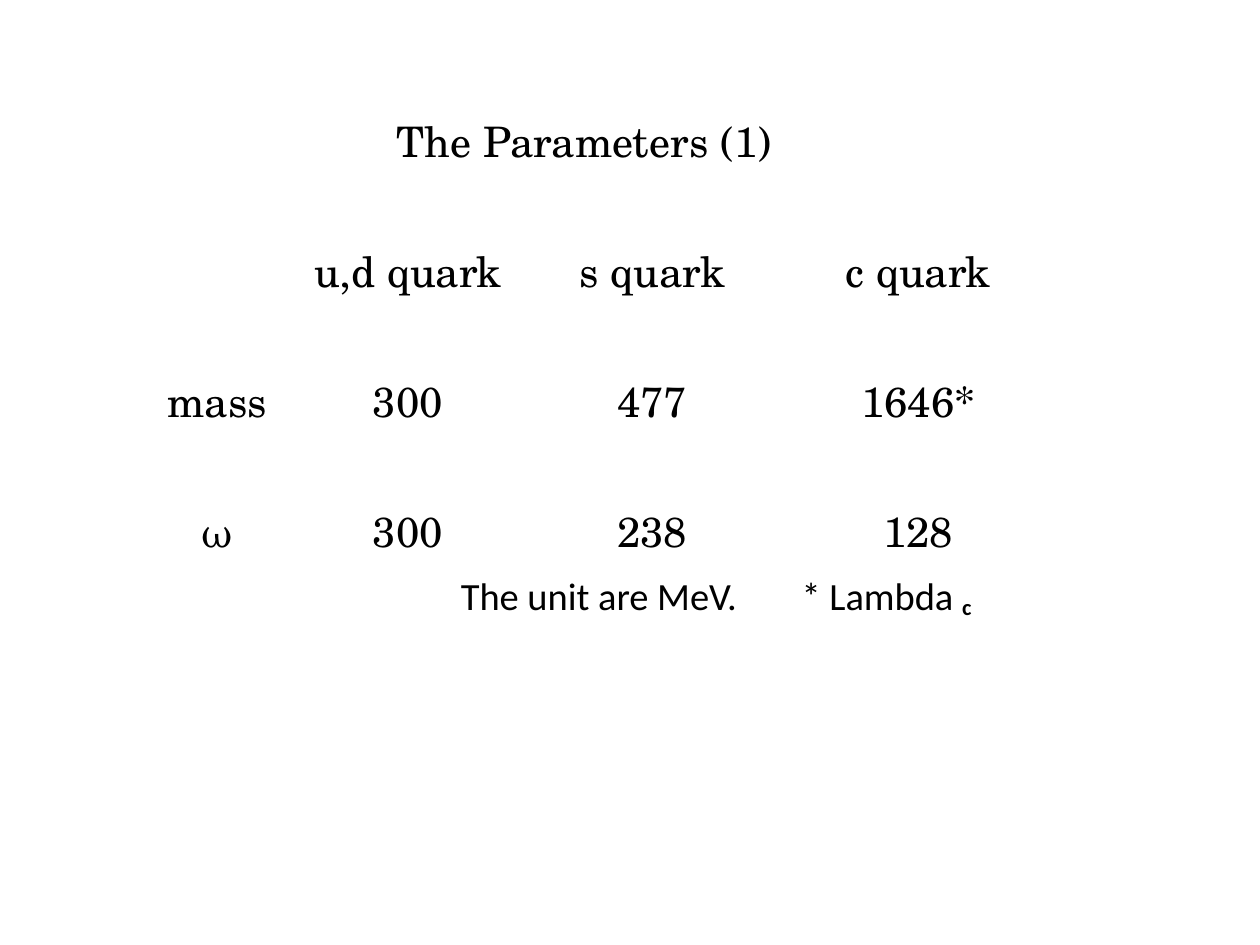
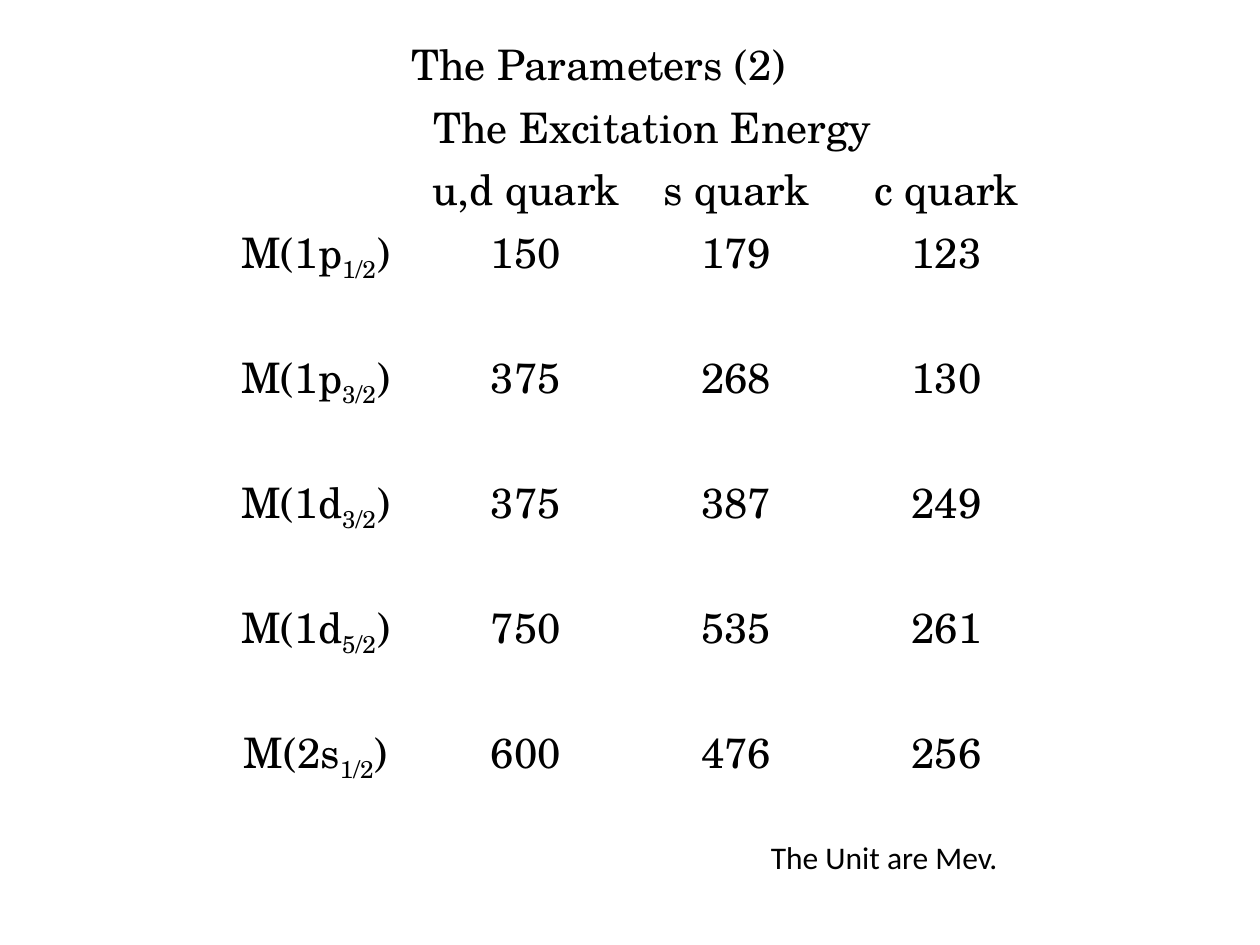
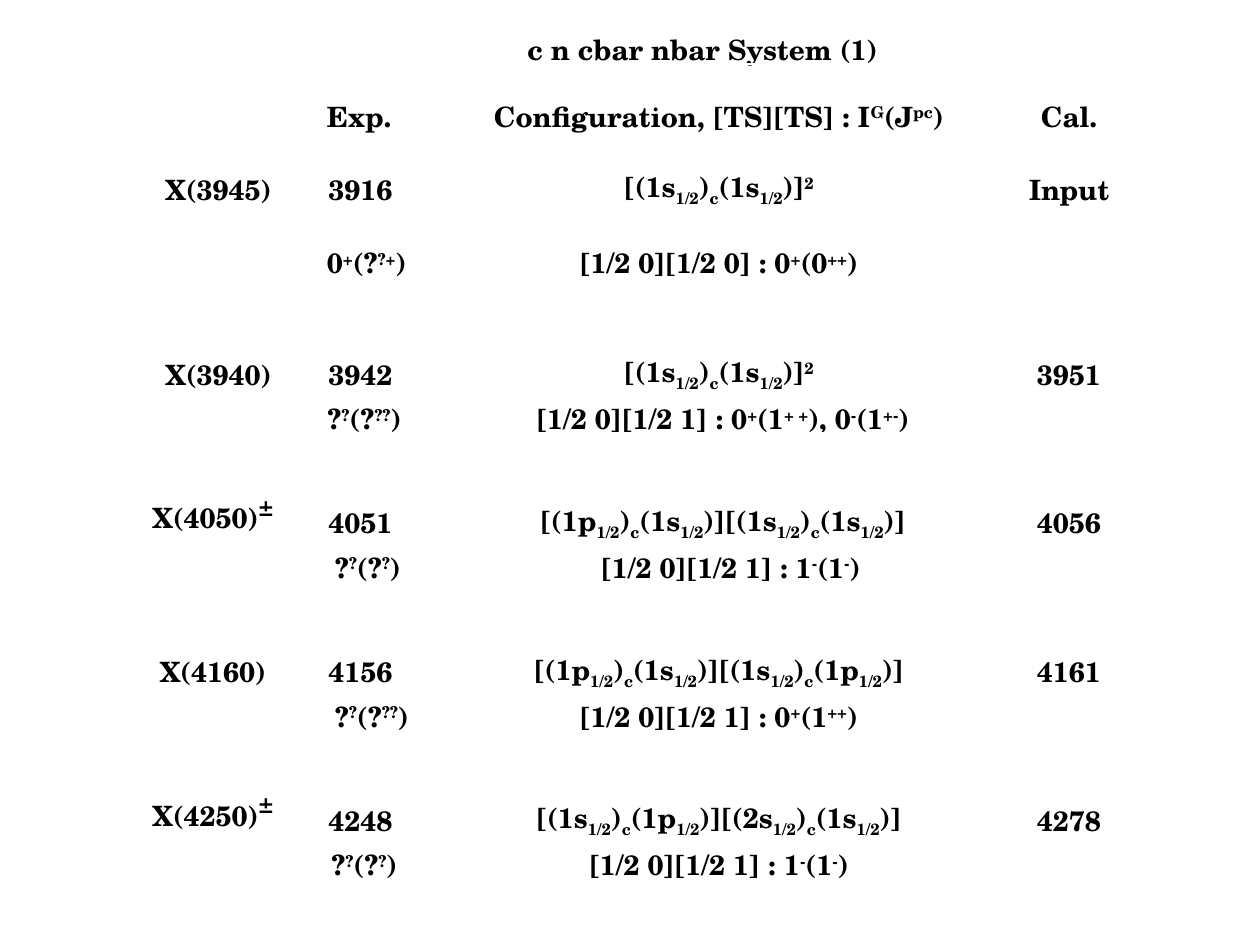
from dataclasses import dataclass

from pptx import Presentation
from pptx.dml.color import RGBColor
from pptx.enum.text import MSO_ANCHOR, MSO_AUTO_SIZE, PP_ALIGN
from pptx.oxml.ns import qn
from pptx.util import Cm, Pt
from lxml.etree import SubElement


@dataclass(frozen=True)
class Theme:
    ink: RGBColor = RGBColor(0x00, 0x00, 0x00)
    table_font: str = "TeX Gyre Schola"
    note_font: str = "Calibri"
    table_size: int = 24
    dense_size: int = 16
    large_note: int = 22
    small_note: int = 18
    cell_inset: float = 0.03


@dataclass(frozen=True)
class Script:
    """How text between a pair of marks is set; baseline is in percent."""
    baseline: int
    size: int = 0
    bold: bool = False


SCRIPTS = {
    "_": Script(-25),
    "^": Script(30),
    "~": Script(30, size=24),
    "|": Script(-15, bold=True),
}


@dataclass(frozen=True)
class Entry:
    """A table cell; indent is in centimetres."""
    text: str
    indent: float = 0
    align: PP_ALIGN = PP_ALIGN.CENTER
    span: int = 1


def left(text, indent, span=1):
    return Entry(text, indent, PP_ALIGN.LEFT, span)


def split_scripts(text):
    """Yield each stretch of text with the mark that encloses it."""
    mark, part = "", ""
    for char in text:
        if char in SCRIPTS:
            if part:
                yield part, mark
            mark, part = "" if char == mark else char, ""
        else:
            part += char
    if part:
        yield part, mark


class Deck:
    def __init__(self, theme):
        self.theme = theme
        self.prs = Presentation()
        self.prs.slide_width, self.prs.slide_height = Cm(25.4), Cm(19.05)
        self.s = None

    def new_slide(self):
        self.s = self.prs.slides.add_slide(self.prs.slide_layouts[6])

    def add_runs(self, p, text, font, size, bold=False):
        for part, mark in split_scripts(text):
            script = SCRIPTS.get(mark, Script(0))
            r = p.add_run()
            r.text = part
            r.font.name = font
            r.font.size = Pt(script.size or size)
            r.font.bold = bold or script.bold
            r.font.color.rgb = self.theme.ink
            if script.baseline:
                r._r.get_or_add_rPr().set("baseline", str(script.baseline * 1000))

    def cell(self, cell, entry, size, bold):
        inset = Cm(self.theme.cell_inset)
        cell.fill.background()
        cell.vertical_anchor = MSO_ANCHOR.BOTTOM
        cell.margin_left = cell.margin_right = cell.margin_top = inset
        cell.margin_bottom = 0
        p = cell.text_frame.paragraphs[0]
        p.alignment = entry.align
        if entry.indent:
            p._p.get_or_add_pPr().set("marL", str(Cm(entry.indent)))
        self.add_runs(p, entry.text, self.theme.table_font, size, bold)
        # Keeps empty cells from stretching their row.
        SubElement(p._p, qn("a:endParaRPr")).set("sz", str(size * 100))

    def table(self, x, y, widths, heights, rows, size, bold=False):
        frame = self.s.shapes.add_table(len(heights), len(widths), Cm(x), Cm(y),
                                        Cm(sum(widths)), Cm(sum(heights)))
        table = frame.table
        table.first_row = table.horz_banding = False
        for column, width in zip(table.columns, widths):
            column.width = Cm(width)
        for row, height in zip(table.rows, heights):
            row.height = Cm(height)
        for i in range(len(heights)):
            entries = rows.get(i, [])
            for j in range(len(widths)):
                entry = entries[j] if j < len(entries) else ""
                if isinstance(entry, str):
                    entry = Entry(entry)
                cell = table.cell(i, j)
                if entry.span > 1:
                    cell.merge(table.cell(i, j + entry.span - 1))
                self.cell(cell, entry, size, bold)

    def note(self, x, y, w, h, text, size, inset=0.25, tab=0):
        """Add a note; tab is measured from the start of its text."""
        tf = self.s.shapes.add_textbox(Cm(x), Cm(y), Cm(w), Cm(h)).text_frame
        tf.word_wrap = True
        tf.auto_size = MSO_AUTO_SIZE.SHAPE_TO_FIT_TEXT
        tf.margin_left = Cm(inset)
        p = tf.paragraphs[0]
        if tab:
            stops = SubElement(p._p.get_or_add_pPr(), qn("a:tabLst"))
            SubElement(stops, qn("a:tab"), pos=str(Cm(tab)), algn="l")
        self.add_runs(p, text, self.theme.note_font, size)


QUARKS = ["", "u,d quark", "s quark", "c quark"]


def quark_parameters(deck):
    deck.new_slide()
    gap, line = 1.27, 1.35
    rows = {
        0: [left("The Parameters (1)", 5.18, span=3)],
        2: QUARKS,
        4: ["mass", "300", "477", "1646*"],
        6: ["ω", "300", "238", "128"],
    }
    deck.table(2.79, 2.18, [3.18, 4.5, 5.36, 5.36], [gap] + [gap, line] * 3,
               rows, deck.theme.table_size)
    deck.note(7.82, 11.4, 12.8, 1.19, "The unit are MeV.\t* Lambda |c|",
              deck.theme.large_note, inset=1.47, tab=6.87)


def excitation_energy(deck):
    deck.new_slide()
    levels = [
        ["M(1p_1/2_)", "150", "179", "123"],
        ["M(1p_3/2_)", "375", "268", "130"],
        ["M(1d_3/2_)", "375", "387", "249"],
        ["M(1d_5/2_)", "750", "535", "261"],
        ["M(2s_1/2_)", "600", "476", "256"],
    ]
    rows = {
        0: [left("The Parameters (2)", 4.02, span=4)],
        1: ["", left("The Excitation Energy", 0.22, span=3)],
        2: QUARKS,
    }
    rows.update({3 + 2 * i: level for i, level in enumerate(levels)})
    deck.table(4.24, 0.64, [4.24] * 4, [1.26] * 12, rows, deck.theme.table_size)
    deck.note(15.29, 16.76, 5.13, 1.02, "The Unit are Mev.", deck.theme.small_note)


def pair(charm, light):
    """A charm quark and a light quark, each in a j = 1/2 orbit."""
    return f"[({charm}_1/2_)_c_({light}_1/2_)]"


def four_quark_system(deck):
    deck.new_slide()
    short, tall = 0.76, 1.48
    space = 0.16
    ground = pair("1s", "1s")
    rows = {
        0: ["", left("c n cbar nbar System (1)", 5.01, span=2)],
        1: ["", left("Exp.", 0.97), "Configuration, [TS][TS] : I^G^(J^pc^)", "Cal."],
        2: [left("X(3945)", 0.31), "3916", ground + "^2^", "Input"],
        3: ["", left("0^+^(?^?+^)", 0.97), "[1/2 0][1/2 0] : 0^+^(0^++^)"],
        5: [left("X(3940)", 0.31), "3942", ground + "^2^", "3951"],
        6: ["", Entry("?^?^(?^??^)", space),
            Entry("[1/2 0][1/2 1] : 0^+^(1^+ +^), 0^-^(1^+-^)", space)],
        8: ["X(4050)~±~", "4051", Entry(pair("1p", "1s") + ground, space), "4056"],
        9: ["", left("?^?^(?^?^)", 1.13),
            Entry("[1/2 0][1/2 1] : 1^-^(1^-^)", 3 * space)],
        11: ["X(4160)", "4156", pair("1p", "1s") + pair("1s", "1p"), "4161"],
        12: ["", left("?^?^(?^??^)", 1.13), "[1/2 0][1/2 1] : 0^+^(1^++^)"],
        14: ["X(4250)~±~", "4248", pair("1s", "1p") + pair("2s", "1s"), "4278"],
        15: ["", Entry("?^?^(?^?^)", space), "[1/2 0][1/2 1] : 1^-^(1^-^)"],
    }
    heights = [short] + [tall] * 3 + [short, tall, short] * 4 + [short]
    deck.table(3, 0.53, [2.59, 3.35, 11.1, 3.02], heights, rows,
               deck.theme.dense_size, bold=True)


def main():
    deck = Deck(Theme())
    quark_parameters(deck)
    excitation_energy(deck)
    four_quark_system(deck)
    deck.prs.save("out.pptx")


if __name__ == "__main__":
    main()
